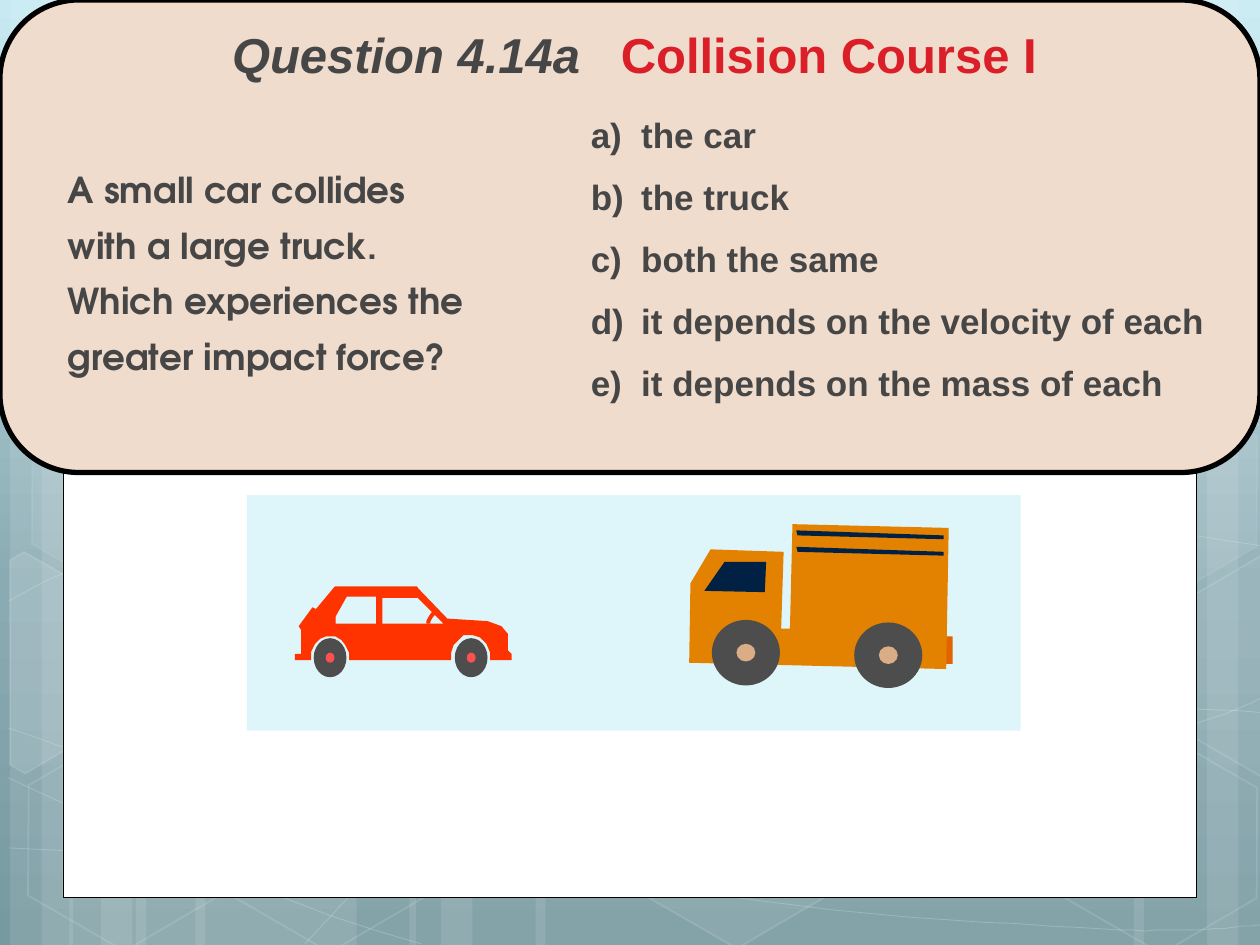
from lxml import etree
from copy import deepcopy
from pptx import Presentation
from pptx.dml.color import RGBColor
from pptx.enum.shapes import MSO_SHAPE
from pptx.enum.text import MSO_ANCHOR, PP_ALIGN
from pptx.oxml.ns import qn
from pptx.util import Inches, Pt

RECT, OVAL, HEXAGON = MSO_SHAPE.RECTANGLE, MSO_SHAPE.OVAL, MSO_SHAPE.HEXAGON
WHITE, BLACK = RGBColor(255, 255, 255), RGBColor(0, 0, 0)
SKY = [(0, RGBColor(0xC7, 0xEA, 0xF2)), (0.62, RGBColor(0x8B, 0xAB, 0xB3)),
       (1, RGBColor(0x77, 0x99, 0xA0))]
PANEL = RGBColor(0xEF, 0xDC, 0xCD)
INK, TITLE_RED = RGBColor(0x46, 0x46, 0x46), RGBColor(0xDA, 0x1F, 0x28)
PALE_BLUE, NAVY = RGBColor(0xDE, 0xF5, 0xFA), RGBColor(0x00, 0x21, 0x44)
TRUCK, BUMPER = RGBColor(0xE2, 0x82, 0x00), RGBColor(0xE2, 0x63, 0x00)
TYRE, TRUCK_HUB = RGBColor(0x4D, 0x4D, 0x4D), RGBColor(0xDB, 0xAD, 0x87)
CAR, CAR_HUB = RGBColor(0xFF, 0x33, 0x00), RGBColor(0xFF, 0x50, 0x50)

prs = Presentation()
prs.slide_width, prs.slide_height = Inches(10), Inches(7.5)
U = prs.slide_width // 10  # grid of 10 columns by 7.5 rows
s = prs.slides.add_slide(prs.slide_layouts[6])


def paint(sp, fill=None, line=None, width=1, fill_alpha=100, line_alpha=100):
    """Set fill and line, each with an opacity in percent."""
    sp.shadow.inherit = False
    if fill is None:
        sp.fill.background()
    else:
        sp.fill.solid()
        sp.fill.fore_color.rgb = fill
    if line is None:
        sp.line.fill.background()
    else:
        sp.line.color.rgb = line
        sp.line.width = Pt(width)
    for where, alpha in (("a:solidFill", fill_alpha), ("a:ln", line_alpha)):
        if alpha < 100:
            color = next(sp._element.spPr.find(qn(where)).iter(qn("a:srgbClr")))
            etree.SubElement(color, qn("a:alpha"), val=str(alpha * 1000))
    return sp


def outline(shapes, points, close=True):
    """Freeform through grid points, held to a hundredth of a cell."""
    pts = [(x * 100, y * 100) for x, y in points]
    fb = shapes.build_freeform(*pts[0], scale=U / 100)
    fb.add_line_segments(pts[1:], close=close)
    return fb.convert_to_shape()


# Background
bg = s.background.fill
bg.gradient()
bg.gradient_angle = 270
stops = next(s._element.iter(qn("a:gsLst")))
stops.append(deepcopy(stops[0]))
for stop, (position, color) in zip(bg.gradient_stops, SKY):
    stop.position = position
    stop.color.rgb = color

decor = s.shapes.add_group_shape().shapes
for left, width in [(1.08, 1.75), (0.08, 0.5), (0.33, 0.83), (1.55, 1.75), (0.55, 0.5),
                    (0.8, 0.83), (7.33, 1.75), (9.58, 0.5), (9, 0.83), (4.25, 3.08),
                    (3.25, 0.5), (3.5, 0.83)]:
    paint(decor.add_shape(RECT, int(left * U), 0, int(width * U), prs.slide_height),
          WHITE, fill_alpha=10)

# Each curve is a start point, then two controls and an end point per Bezier segment
curves = [
    [(0.07, 6.73), (0.61, 6.76), (1.15, 6.79), (1.9, 6.78), (2.65, 6.77), (3.58, 6.75),
     (4.58, 6.65), (5.58, 6.55), (7, 6.36), (7.92, 6.17), (8.83, 5.98), (9.77, 5.68),
     (10.07, 5.51)],
    [(0.07, 4.77), (0.36, 4.61), (0.65, 4.46), (1.21, 4.31), (1.78, 4.16), (2.59, 3.94),
     (3.47, 3.87), (4.36, 3.8), (5.44, 3.79), (6.54, 3.87), (7.64, 3.95), (9.47, 4.26),
     (10.07, 4.34)],
    [(0.06, 6.17), (1.27, 6.72), (2.47, 7.27), (3.34, 7.49)],
    [(0.07, 5.78), (0.38, 5.89), (0.7, 6), (1.28, 6.16), (1.86, 6.31), (2.73, 6.56),
     (3.57, 6.73), (4.4, 6.9), (5.45, 7.08), (6.28, 7.18), (7.11, 7.29), (8, 7.33),
     (8.53, 7.36), (9.05, 7.4), (9.19, 7.38), (9.45, 7.38), (9.71, 7.37), (9.89, 7.35),
     (10.07, 7.34)],
    [(2.42, 7.49), (2.6, 7.29), (2.78, 7.09), (3.02, 6.91), (3.26, 6.73), (3.6, 6.53),
     (3.88, 6.39), (4.16, 6.25), (4.33, 6.19), (4.7, 6.09), (5.06, 5.99), (5.73, 5.85),
     (6.08, 5.78), (6.44, 5.71), (6.49, 5.71), (6.8, 5.69), (7.11, 5.66), (7.6, 5.63),
     (7.94, 5.62), (8.29, 5.61), (9.5, 5.61), (10.06, 5.66)],
]
STEPS = 8
for curve in curves:
    points = [curve[0]]
    for i in range(0, len(curve) - 1, 3):
        for t in (k / STEPS for k in range(1, STEPS + 1)):
            weights = ((1 - t) ** 3, 3 * t * (1 - t) ** 2, 3 * t * t * (1 - t), t ** 3)
            points.append([sum(w * p[axis] for w, p in zip(weights, curve[i:i + 4]))
                           for axis in (0, 1)])
    paint(outline(decor, points, close=False), None, WHITE, 0.5, line_alpha=20)

for left, top, fill_alpha, line_alpha in [
        (4.97, 5.89, 6, 12), (0.11, 5.91, 0, 12), (0.14, 3.12, 7, 8), (1.74, 5.92, 0, 12),
        (7.53, 4.53, 10, 12), (8.34, 5.93, 0, 12), (8.34, 3.14, 7, 8)]:
    sp = decor.add_shape(HEXAGON, int(left * U), int(top * U), int(1.75 * U), int(1.52 * U))
    sp.adjustments[0] = 0.285
    sp.rotation = 30
    paint(sp, WHITE if fill_alpha else None, WHITE, 1, fill_alpha or 100, line_alpha)

for points, fill_alpha in [
        ([(0.08, 4.45), (0.19, 4.38), (0.96, 4.82), (0.95, 5.7), (0.2, 6.14), (0.08, 6.07)], 10),
        ([(9.26, 4.85), (10.01, 4.41), (10.09, 4.46), (10.09, 6.13), (10.02, 6.17),
          (9.26, 5.73)], 4),
        ([(9.26, 2.07), (10.01, 1.63), (10.1, 1.68), (10.09, 3.35), (10.02, 3.39),
          (9.26, 2.95)], 0)]:
    paint(outline(decor, points), WHITE if fill_alpha else None, WHITE, 1,
          fill_alpha or 100, 12)

# Page and question panel
page = s.shapes.add_shape(RECT, int(0.5 * U), int(0.36 * U), 9 * U, int(6.76 * U))
paint(page, WHITE, BLACK, 0.5)
panel = s.shapes.add_shape(MSO_SHAPE.ROUNDED_RECTANGLE, 0, 0, 10 * U, int(3.75 * U))
paint(panel, PANEL, BLACK, 3)

# Title
tf = s.shapes.add_textbox(int(1.02 * U), 0, int(8.03 * U), int(0.92 * U)).text_frame
tf.word_wrap = True
tf.vertical_anchor = MSO_ANCHOR.MIDDLE
p = tf.paragraphs[0]
p.alignment = PP_ALIGN.CENTER
p.line_spacing = 0.9
p.font.name, p.font.size, p.font.bold = "Arial", Pt(28), True
for text, color, italic in [("Question 4.14a", INK, True), (" ", INK, True),
                            ("Collision Course I", TITLE_RED, False)]:
    r = p.add_run()
    r.text, r.font.italic, r.font.color.rgb = text, italic, color
    r.font.name, r.font.size, r.font.bold = "Arial", Pt(28), True
    if text == " ":
        r._r.get_or_add_rPr().set("spc", "1550")  # widens the gap between the two parts

# Question and answers
question = "A small car collides with a large truck. Which experiences the greater impact force?"
answers = ["a)\tthe car", "b)\tthe truck", "c)\tboth the same",
           "d)\tit depends on the velocity of each", "e)\tit depends on the mass of each"]
for left, top, width, height, lines, font, size, margin, hang, spacing, before in [
        (0, 1.18, 3.93, 2.25, [question], "TeX Gyre Adventor", 20.4, 0.44, 0, 1.3, 0),
        (4.59, 0.85, 5.41, 2.43, answers, "Arial", 20, 0.4, 0.4, 1, 11.5)]:
    tf = s.shapes.add_textbox(int(left * U), int(top * U), int(width * U),
                              int(height * U)).text_frame
    tf.word_wrap = True
    for i, text in enumerate(lines):
        p = tf.add_paragraph() if i else tf.paragraphs[0]
        p.text = text
        p.font.name, p.font.size, p.font.bold = font, Pt(size), True
        p.font.color.rgb = INK
        p.line_spacing = spacing
        p.space_before = Pt(before if i else 0)
        pPr = p._p.get_or_add_pPr()
        pPr.set("marL", str(int(margin * U)))
        pPr.set("indent", str(int(-hang * U)))

# Truck and car, from back to front
scene = s.shapes.add_group_shape().shapes
truck_body = [(5.47, 5.26), (7.51, 5.31), (7.53, 4.19), (6.29, 4.16), (6.27, 4.99),
              (6.2, 4.99), (6.22, 4.38), (5.64, 4.36), (5.48, 4.63)]
truck_window = [(5.59, 4.69), (6.07, 4.7), (6.08, 4.46), (5.75, 4.46)]
stripes = [[(6.32, y), (6.33, y + 0.04), (7.49, y + 0.07), (7.49, y + 0.04)]
           for y in (4.21, 4.34)]
car_body = [
    (4.06, 5.24), (3.89, 5.24), (3.89, 5.18), (3.86, 5.11), (3.81, 5.06), (3.75, 5.04),
    (3.68, 5.04), (3.64, 5.08), (3.6, 5.12), (3.58, 5.18), (3.58, 5.24), (2.77, 5.24),
    (2.77, 5.18), (2.74, 5.12), (2.71, 5.08), (2.66, 5.05), (2.59, 5.05), (2.54, 5.07),
    (2.5, 5.11), (2.47, 5.17), (2.47, 5.24), (2.34, 5.24), (2.34, 5.19), (2.39, 5.19),
    (2.39, 5), (2.37, 4.97), (2.48, 4.82), (2.52, 4.84), (2.66, 4.95), (3.52, 4.95),
    (3.31, 4.74), (3.31, 4.66), (3.55, 4.91), (3.87, 4.93), (3.98, 4.97), (4.03, 5.03),
    (4.03, 5.16), (4.06, 5.19)]
steering_wheel = [(3.45, 4.86), (3.43, 4.88), (3.41, 4.91), (3.4, 4.93), (3.4, 4.95)]
car_roof = [(3.31, 4.66), (3.31, 4.74), (3.03, 4.74), (3.03, 4.95), (2.99, 4.95),
            (2.99, 4.73), (2.75, 4.73), (2.66, 4.89), (2.66, 4.95), (2.51, 4.84),
            (2.66, 4.66)]

for left, top, width, height, fill in [(1.96, 3.93, 6.14, 1.87, PALE_BLUE),
                                       (7.44, 5.05, 0.12, 0.22, BUMPER)]:
    paint(scene.add_shape(RECT, int(left * U), int(top * U), int(width * U),
                          int(height * U)), fill)
for points, fill in [(truck_body, TRUCK), (truck_window, NAVY), (stripes[0], NAVY),
                     (stripes[1], NAVY), (car_body, CAR)]:
    paint(outline(scene, points), fill)
paint(outline(scene, steering_wheel, close=False), CAR, CAR, 2.25)
paint(outline(scene, car_roof), CAR, CAR, 0.75)

# Wheels: centre, tyre size, hub size
for cx, cy, tyre, hub, hub_color in [
        (5.92, 5.18, (0.54, 0.52), (0.15, 0.14), TRUCK_HUB),
        (7.05, 5.2, (0.54, 0.52), (0.15, 0.14), TRUCK_HUB),
        (3.74, 5.22, (0.26, 0.31), (0.07, 0.08), CAR_HUB),
        (2.62, 5.22, (0.26, 0.31), (0.07, 0.08), CAR_HUB)]:
    for (w, h), fill in ((tyre, TYRE), (hub, hub_color)):
        paint(scene.add_shape(OVAL, int((cx - w / 2) * U), int((cy - h / 2) * U),
                              int(w * U), int(h * U)), fill)

prs.save("out.pptx")
